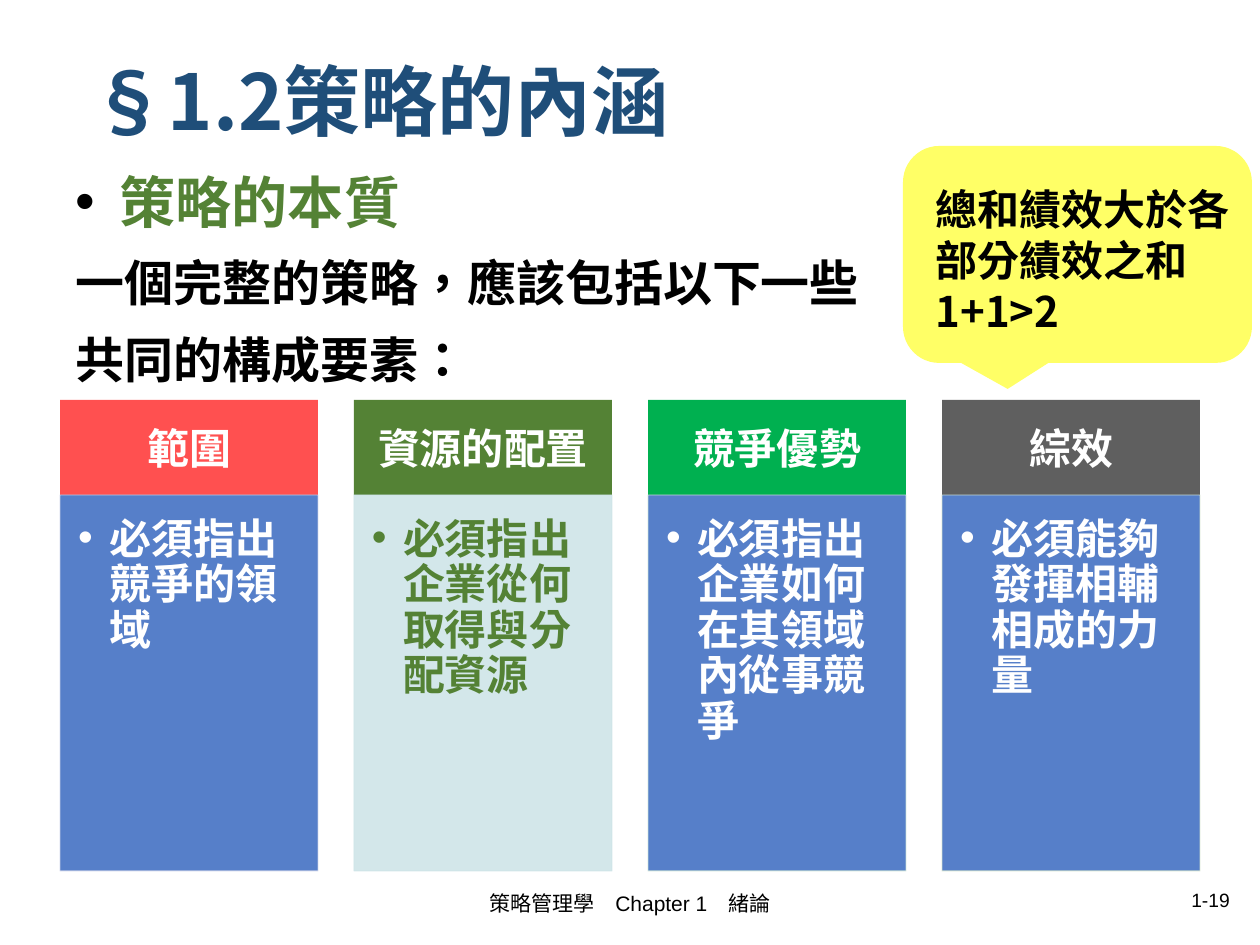
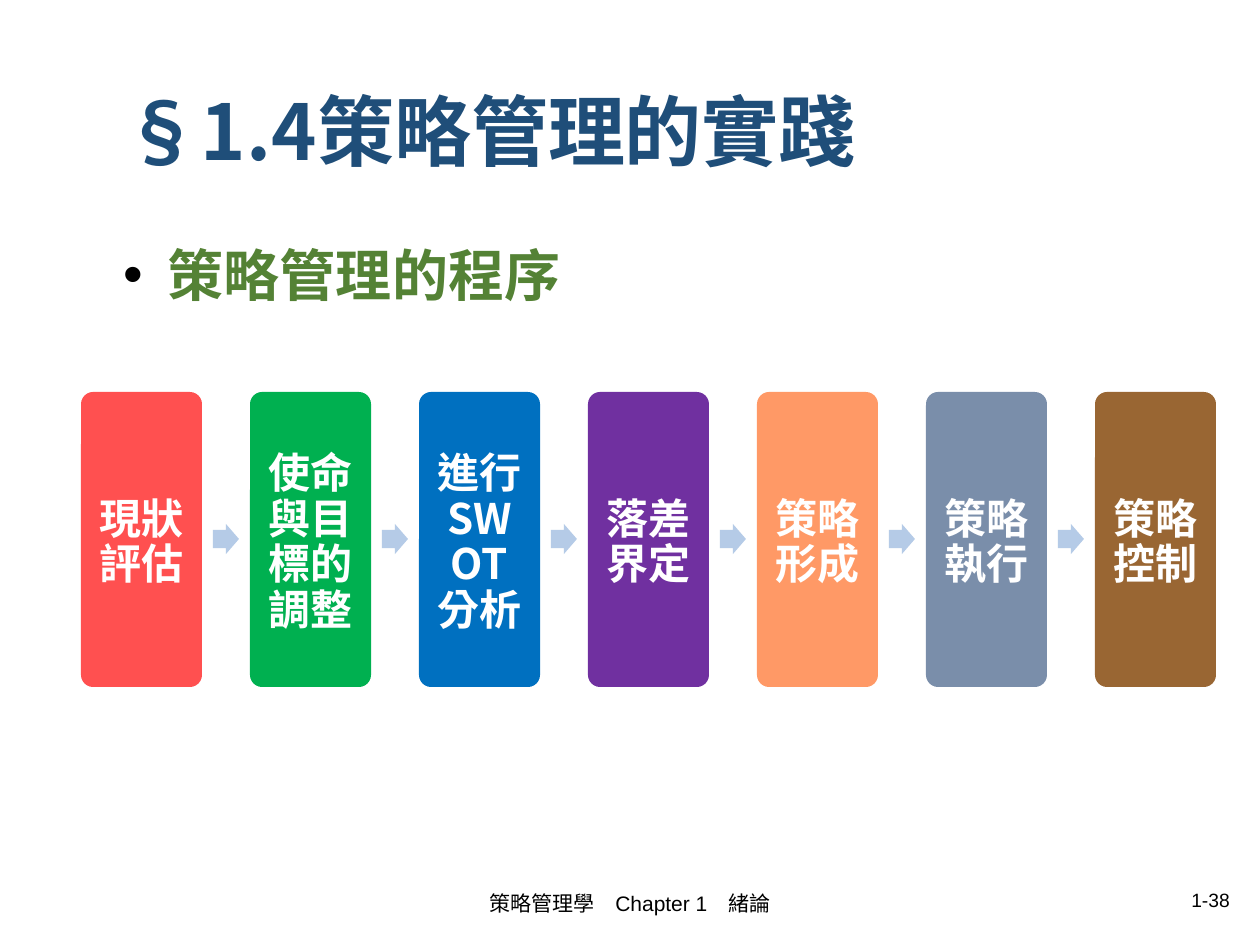
from pptx import Presentation
from pptx.dml.color import RGBColor
from pptx.enum.shapes import MSO_SHAPE
from pptx.enum.text import MSO_ANCHOR, PP_ALIGN
from pptx.oxml import parse_xml
from pptx.oxml.ns import nsdecls, qn
from pptx.util import Pt
from lxml.etree import SubElement

PX = 914400 / 126
CJK = "Noto Sans CJK SC"
HUE = dict(
    navy="1F4E79", moss="548235", black="000000", white="FFFFFF",
    red="FF5050", green="00B050", gray="5F5F5F", blue="4472C4",
    mist="CFE5E8", lemon="FFFF66", sky="0070C0", plum="7030A0",
    peach="FF9966", slate="7A8EAA", brown="996633", pale="B5CBE7",
    edge1="CFD5EA", edge3="CFE5D8", edge4="D5E3CF",
)
LEFT, MID, RIGHT = PP_ALIGN.LEFT, PP_ALIGN.CENTER, PP_ALIGN.RIGHT

# Font values and paragraph values of each text style
LOOK = dict(
    title=(dict(size=Pt(44), bold=True, name=CJK),
           dict(line_spacing=Pt(48), alignment=LEFT)),
    head=(dict(size=Pt(32), bold=True, name=CJK),
          dict(line_spacing=Pt(38), alignment=LEFT)),
    body=(dict(size=Pt(28), bold=True, name=CJK),
          dict(line_spacing=Pt(34), alignment=LEFT, space_before=Pt(10))),
    label=(dict(size=Pt(24), bold=True, name=CJK),
           dict(line_spacing=Pt(26), alignment=MID)),
    item=(dict(size=Pt(24), bold=True, name=CJK),
          dict(line_spacing=Pt(26), alignment=LEFT)),
    note=(dict(size=Pt(24), bold=True, name=CJK),
          dict(line_spacing=Pt(29), alignment=LEFT)),
    foot=(dict(size=Pt(12), bold=False, name="Arial"), dict(alignment=MID)),
    page=(dict(size=Pt(11), bold=False, name="Arial"), dict(alignment=RIGHT)),
)


def draw(slide, kind, box, fill=None):
    """Add a preset shape, or a text box when kind is None; box is in px."""
    place = [round(v * PX) for v in box]
    if kind is None:
        return slide.shapes.add_textbox(*place)
    shape = slide.shapes.add_shape(kind, *place)
    shape.shadow.inherit = False
    shape.fill.solid()
    shape.fill.fore_color.rgb = RGBColor.from_string(HUE[fill])
    shape.line.fill.background()
    return shape


def write(shape, lines, pad=(13, 6, 13, 6), anchor=MSO_ANCHOR.TOP):
    """Fill a shape with (text, style, colour, bullet indent in px) lines."""
    frame = shape.text_frame
    frame.word_wrap = True
    frame.vertical_anchor = anchor
    for side, gap in zip(("left", "top", "right", "bottom"), pad):
        setattr(frame, "margin_" + side, round(gap * PX))
    for num, (text, style, hue, dent) in enumerate(lines):
        para = frame.add_paragraph() if num else frame.paragraphs[0]
        run = para.add_run()
        run.text = text
        for target, values in zip((run.font, para), LOOK[style]):
            for key, value in values.items():
                setattr(target, key, value)
        run.font.color.rgb = RGBColor.from_string(HUE[hue])
        props = run.font._element
        props.set("lang", "zh-TW")
        SubElement(props, qn("a:ea")).set("typeface", CJK)
        if dent:
            prop = para._p.get_or_add_pPr()
            prop.set("marL", str(round(dent * PX)))
            prop.set("indent", str(-round(dent * PX)))
            dot = HUE["black" if style == "head" else hue]
            for part in (f'<a:buClr {nsdecls("a")}><a:srgbClr val="{dot}"/></a:buClr>',
                         f'<a:buFont {nsdecls("a")} typeface="Arial"/>',
                         f'<a:buChar {nsdecls("a")} char="•"/>'):
                prop.append(parse_xml(part))


deck = Presentation()
deck.slide_width, deck.slide_height = round(1260 * PX), round(945 * PX)

# Title and footer of each slide
pages = []
for text, left, top, page in (("§1.2策略的內涵", 78, 52, "1-19"),
                              ("§1.4策略管理的實踐", 111, 82, "1-38")):
    slide = deck.slides.add_slide(deck.slide_layouts[6])
    pages.append(slide)
    for line, style, hue, box in (
            (text, "title", "navy", (left, top, 1047, 103)),
            ("策略管理學　Chapter 1　緒論", "foot", "black", (417, 878, 426, 50)),
            (page, "page", "black", (890, 881, 353, 38))):
        write(draw(slide, None, box), [(line, style, hue, 0)],
              anchor=MSO_ANCHOR.MIDDLE)
parts, steps = pages

# Slide 1: four parts of a strategy
write(draw(parts, None, (63, 162, 830, 230)), [
    ("策略的本質", "head", "moss", 44),
    ("一個完整的策略，應該包括以下一些", "body", "black", 0),
    ("共同的構成要素：", "body", "black", 0),
])
cards = (
    ("範圍", "red", "必須指出競爭的領域", "blue", "edge1", "white"),
    ("資源的配置", "moss", "必須指出企業從何取得與分配資源", "mist", "mist", "moss"),
    ("競爭優勢", "green", "必須指出企業如何在其領域內從事競爭", "blue", "edge3", "white"),
    ("綜效", "gray", "必須能夠發揮相輔相成的力量", "blue", "edge4", "white"),
)
for num, (name, top, text, fill, edge, ink) in enumerate(cards):
    left = 60 + 294 * num
    head = draw(parts, MSO_SHAPE.RECTANGLE, (left, 400, 258, 95), top)
    write(head, [(name, "label", "white", 0)], (18, 18, 18, 12),
          MSO_ANCHOR.MIDDLE)
    card = draw(parts, MSO_SHAPE.RECTANGLE, (left, 495, 258, 376), fill)
    card.line.color.rgb = RGBColor.from_string(HUE[edge])
    card.line.width = Pt(0.5)
    for tone in card._element.spPr.iter(qn("a:srgbClr")):
        SubElement(tone, qn("a:alpha")).set("val", "90000")
    write(card, [(text, "item", ink, 31)], (18, 22, 24, 26))

note = draw(parts, MSO_SHAPE.ROUNDED_RECTANGULAR_CALLOUT,
            (903, 146, 349, 217), "lemon")
note.adjustments[0], note.adjustments[1] = -0.2, 0.62
write(note, [("總和績效大於各部分績效之和", "note", "black", 0),
             ("1+1>2", "note", "black", 0)], (22, 27, 5, 6))

# Slide 2: seven steps in a row
write(draw(steps, None, (111, 235, 1047, 80)),
      [("策略管理的程序", "head", "moss", 44)])
flow = (("現狀評估", "red"), ("使命與目標的調整", "green"),
        ("進行SWOT分析", "sky"), ("落差界定", "plum"), ("策略形成", "peach"),
        ("策略執行", "slate"), ("策略控制", "brown"))
for num, (text, fill) in enumerate(flow):
    left = 81 + 169 * num
    step = draw(steps, MSO_SHAPE.ROUNDED_RECTANGLE, (left, 392, 121, 295), fill)
    step.adjustments[0] = 0.1
    write(step, [(text, "label", "white", 0)], (13, 18, 13, 12),
          MSO_ANCHOR.MIDDLE)
    if num < len(flow) - 1:
        arrow = draw(steps, MSO_SHAPE.RIGHT_ARROW,
                     (left + 132, 524, 26, 30), "pale")
        arrow.adjustments[0], arrow.adjustments[1] = 0.6, 0.5

deck.save("out.pptx")
